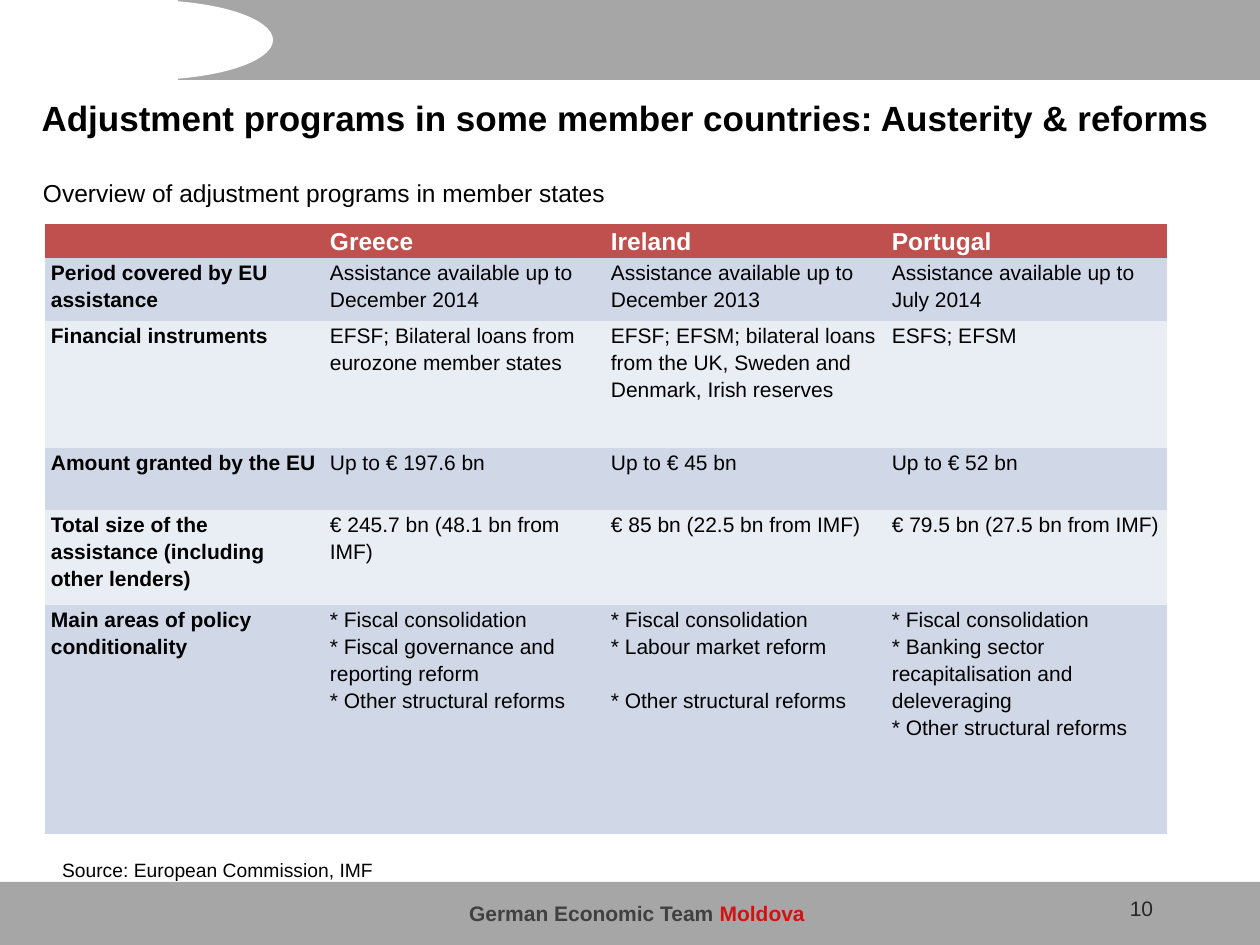
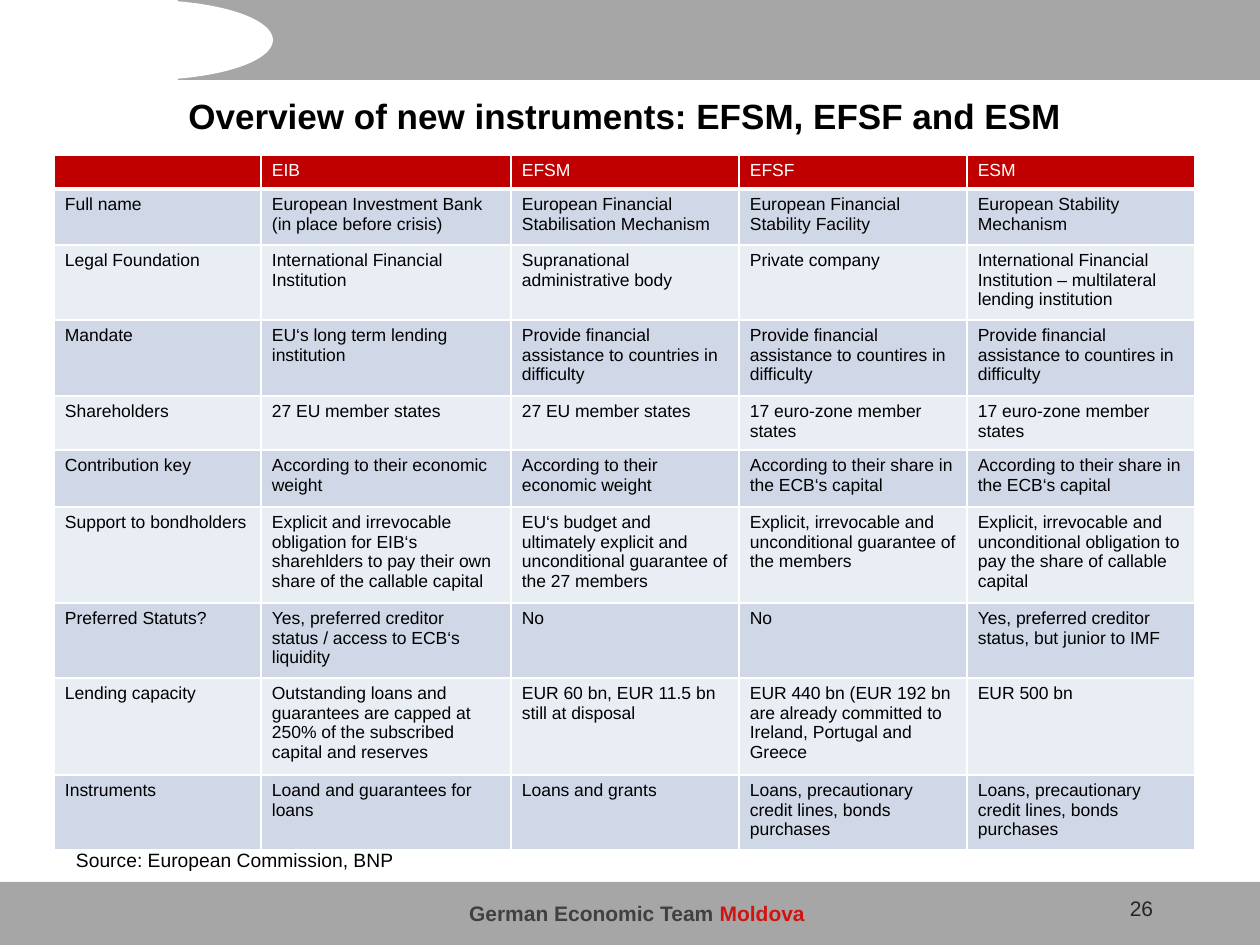
from lxml import etree
from pptx import Presentation
from pptx.dml.color import RGBColor
from pptx.enum.shapes import MSO_SHAPE
from pptx.enum.text import MSO_ANCHOR, PP_ALIGN
from pptx.oxml.ns import qn
from pptx.util import Emu, Pt

RECT, OVAL = MSO_SHAPE.RECTANGLE, MSO_SHAPE.OVAL
LEFT, CENTER = PP_ALIGN.LEFT, PP_ALIGN.CENTER
TOP, MIDDLE = MSO_ANCHOR.TOP, MSO_ANCHOR.MIDDLE
PX_PER_INCH = 126
SLIDE_W, SLIDE_H = 1260, 945
FONT = "Arial"
NO_STYLE = "{2D5ABB26-0587-4C30-8999-92F81FD0307C}"
COLORS = {
    "band": "A6A6A6", "white": "FFFFFF", "text": "000000",
    "team": "404040", "country": "D01412", "number": "262626",
    "brick": "C0504D", "red": "C00000", "odd": "D0D8E8", "even": "E9EDF4",
}

PROGRAMS = [
    ["", "Greece", "Ireland", "Portugal"],
    ["Period covered by EU assistance",
     "Assistance available up to December 2014",
     "Assistance available up to December 2013",
     "Assistance available up to July 2014"],
    ["Financial instruments",
     "EFSF; Bilateral loans from eurozone member states",
     "EFSF; EFSM; bilateral loans from the UK, Sweden and Denmark, Irish reserves",
     "ESFS; EFSM"],
    ["Amount granted by the EU", "Up to € 197.6 bn", "Up to € 45 bn", "Up to € 52 bn"],
    ["Total size of the assistance (including other lenders)",
     "€ 245.7 bn (48.1 bn from IMF)",
     "€ 85 bn (22.5 bn from IMF)",
     "€ 79.5 bn (27.5 bn from IMF)"],
    ["Main areas of policy conditionality",
     "* Fiscal consolidation\n* Fiscal governance and reporting reform\n* Other structural reforms",
     "* Fiscal consolidation\n* Labour market reform\n\n* Other structural reforms",
     "* Fiscal consolidation\n* Banking sector recapitalisation and deleveraging\n"
     "* Other structural reforms"],
]

INSTRUMENTS = [
    ["", "EIB", "EFSM", "EFSF", "ESM"],
    ["Full name",
     "European Investment Bank (in place before crisis)",
     "European Financial Stabilisation Mechanism",
     "European Financial Stability Facility",
     "European Stability Mechanism"],
    ["Legal Foundation",
     "International Financial Institution",
     "Supranational administrative body",
     "Private company",
     "International Financial Institution – multilateral lending institution"],
    ["Mandate",
     "EU‘s long term lending institution",
     "Provide financial assistance to countries in difficulty",
     "Provide financial assistance to countires in difficulty",
     "Provide financial assistance to countires in difficulty"],
    ["Shareholders",
     "27 EU member states", "27 EU member states",
     "17 euro-zone member states", "17 euro-zone member states"],
    ["Contribution key",
     "According to their economic weight",
     "According to their economic weight",
     "According to their share in the ECB‘s capital",
     "According to their share in the ECB‘s capital"],
    ["Support to bondholders",
     "Explicit and irrevocable obligation for EIB‘s sharehlders to pay their own share "
     "of the callable capital",
     "EU‘s budget and ultimately explicit and unconditional guarantee of the 27 members",
     "Explicit, irrevocable and unconditional guarantee of the members",
     "Explicit, irrevocable and unconditional obligation to pay the share of callable capital"],
    ["Preferred Statuts?",
     "Yes, preferred creditor status / access to ECB‘s liquidity",
     "No", "No",
     "Yes, preferred creditor status, but junior to IMF"],
    ["Lending capacity",
     "Outstanding loans and guarantees are capped at 250% of the subscribed capital and reserves",
     "EUR 60 bn, EUR 11.5 bn still at disposal",
     "EUR 440 bn (EUR 192 bn are already committed to Ireland, Portugal and Greece",
     "EUR 500 bn"],
    ["Instruments",
     "Loand and guarantees for loans",
     "Loans and grants",
     "Loans, precautionary credit lines, bonds purchases",
     "Loans, precautionary credit lines, bonds purchases"],
]


def px(n):
    """Turn pixels into EMU."""
    return Emu(round(n * 914400 / PX_PER_INCH))


def rgb(name):
    """Look up a named colour."""
    return RGBColor.from_string(COLORS[name])


def add_run(p, text, size, color="text", bold=False):
    """Append one formatted run to a paragraph."""
    r = p.add_run()
    r.text = text
    r.font.name, r.font.size, r.font.bold = FONT, Pt(size), bold
    r.font.color.rgb = rgb(color)


def set_margins(target, margins):
    """Set left, top, right and bottom insets of a frame or cell."""
    for side, value in zip(("left", "top", "right", "bottom"), margins):
        setattr(target, "margin_" + side, px(value))


def add_text(s, box, runs, align=LEFT, anchor=TOP, margins=(13, 6, 13, 6), wrap=True, spacing=None):
    """Add a one-paragraph text box made of runs."""
    tf = s.shapes.add_textbox(*map(px, box)).text_frame
    tf.word_wrap, tf.vertical_anchor = wrap, anchor
    set_margins(tf, margins)
    p = tf.paragraphs[0]
    p.alignment, p.line_spacing = align, spacing
    for run in runs:
        add_run(p, *run)


def add_band(s, kind, box, color):
    """Add a plain filled shape without outline."""
    sp = s.shapes.add_shape(kind, *map(px, box))
    sp.shadow.inherit = False
    sp.fill.solid()
    sp.fill.fore_color.rgb = rgb(color)
    sp.line.fill.background()


def add_header(s, box):
    """Add the top band with its rounded white cut-out."""
    x, y, w, h = box
    add_band(s, RECT, (x + 178, y, w - 178, h), "band")
    add_band(s, OVAL, (x + 18, y, 255, h), "white")


def add_footer(s, box, number):
    """Add the bottom band, team name and slide number."""
    x, y, w, h = box
    add_band(s, RECT, box, "band")
    add_text(s, (x + 455, y + 13, 364, 38),
             [("German Economic Team ", 12, "team", True), ("Moldova", 12, "country", True)],
             CENTER, wrap=False)
    add_text(s, (x + 1047, y + 8, 189, 40), [(str(number), 12, "number")], CENTER)


def add_title(s, box, text):
    """Add the centred bold slide title."""
    add_text(s, box, [(text, 20, "text", True)], CENTER, MIDDLE, spacing=0.9)


def add_source(s, box, text):
    """Add the source line below a table."""
    add_text(s, box, [(text, 11)], margins=(13, 9, 13, 6))


def set_border(cell, bottom):
    """Draw white cell borders, with the given bottom width in points."""
    tcPr = cell._tc.get_or_add_tcPr()
    for i, (side, width) in enumerate(zip("LRTB", (1, 1, 1, bottom))):
        ln = etree.Element(qn("a:ln" + side), w=str(Pt(width)))
        fill = etree.SubElement(ln, qn("a:solidFill"))
        etree.SubElement(fill, qn("a:srgbClr"), val=COLORS["white"])
        tcPr.insert(i, ln)


def fill_cell(cell, text, size, color, bold, margins, spacing):
    """Write a cell's lines, turning an empty line into space before the next."""
    set_margins(cell, margins)
    p, gap = cell.text_frame.paragraphs[0], None
    if not text:
        p._p.get_or_add_endParaRPr().set("sz", str(size * 100))
    for i, line in enumerate(text.split("\n") if text else []):
        if not line:
            gap = Pt(15.4)
            continue
        if i:
            p = cell.text_frame.add_paragraph()
        p.line_spacing, p.space_before = spacing, gap
        gap = None
        add_run(p, line, size, color, bold)


def add_grid(s, origin, cols, heights, rows, head, sizes, margins,
             bold=False, spacing=None, bordered=False):
    """Add a banded table with a coloured header row."""
    frame = s.shapes.add_table(len(rows), len(cols), *map(px, (*origin, sum(cols), sum(heights))))
    table = frame.table
    table._tbl.tblPr.find(qn("a:tableStyleId")).text = NO_STYLE
    for col, width in zip(table.columns, cols):
        col.width = px(width)
    for i, texts in enumerate(rows):
        table.rows[i].height = px(heights[i])
        for j, text in enumerate(texts):
            cell = table.cell(i, j)
            cell.fill.solid()
            cell.fill.fore_color.rgb = rgb(head if i == 0 else ("even", "odd")[i % 2])
            fill_cell(cell, text, sizes[min(i, 1)], "text" if i else "white",
                      bold and 0 in (i, j), margins, spacing)
            if bordered:
                set_border(cell, 1 if i else 3)


def new_slide(prs, number):
    """Add a blank slide with the shared bands."""
    s = prs.slides.add_slide(prs.slide_layouts[6])
    add_header(s, (0, 0, SLIDE_W, 80))
    add_footer(s, (0, 882, SLIDE_W, 63), number)
    return s


def programs_slide(prs):
    """Build the slide on adjustment programs."""
    s = new_slide(prs, 10)
    add_title(s, (25, 86, 1201, 69),
              "Adjustment programs in some member countries: Austerity & reforms")
    add_text(s, (43, 178, 1198, 43),
             [("Overview of adjustment programs in member states", 14)], margins=(0, 0, 0, 0))
    add_source(s, (49, 849, 939, 47), "Source: European Commission, IMF")
    add_grid(s, (45, 224), [279] + [281] * 3, [31, 63, 127, 62, 95, 229], PROGRAMS,
             "brick", (14, 12), (6, 0, 6, 0), bold=True, spacing=1.15)


def instruments_slide(prs):
    """Build the slide on the new instruments."""
    s = new_slide(prs, 26)
    add_title(s, (58, 92, 1134, 53), "Overview of new instruments: EFSM, EFSF and ESM")
    add_source(s, (63, 839, 1134, 40), "Source: European Commission, BNP")
    add_grid(s, (54, 155), [207, 250] + [228] * 3,
             [34, 56, 75, 76, 54, 57, 96, 56, 97, 75], INSTRUMENTS,
             "red", (10, 10), (11, 6, 11, 6), bordered=True)


def main():
    """Build and save the presentation."""
    prs = Presentation()
    prs.slide_width, prs.slide_height = px(SLIDE_W), px(SLIDE_H)
    programs_slide(prs)
    instruments_slide(prs)
    prs.save("out.pptx")


if __name__ == "__main__":
    main()
